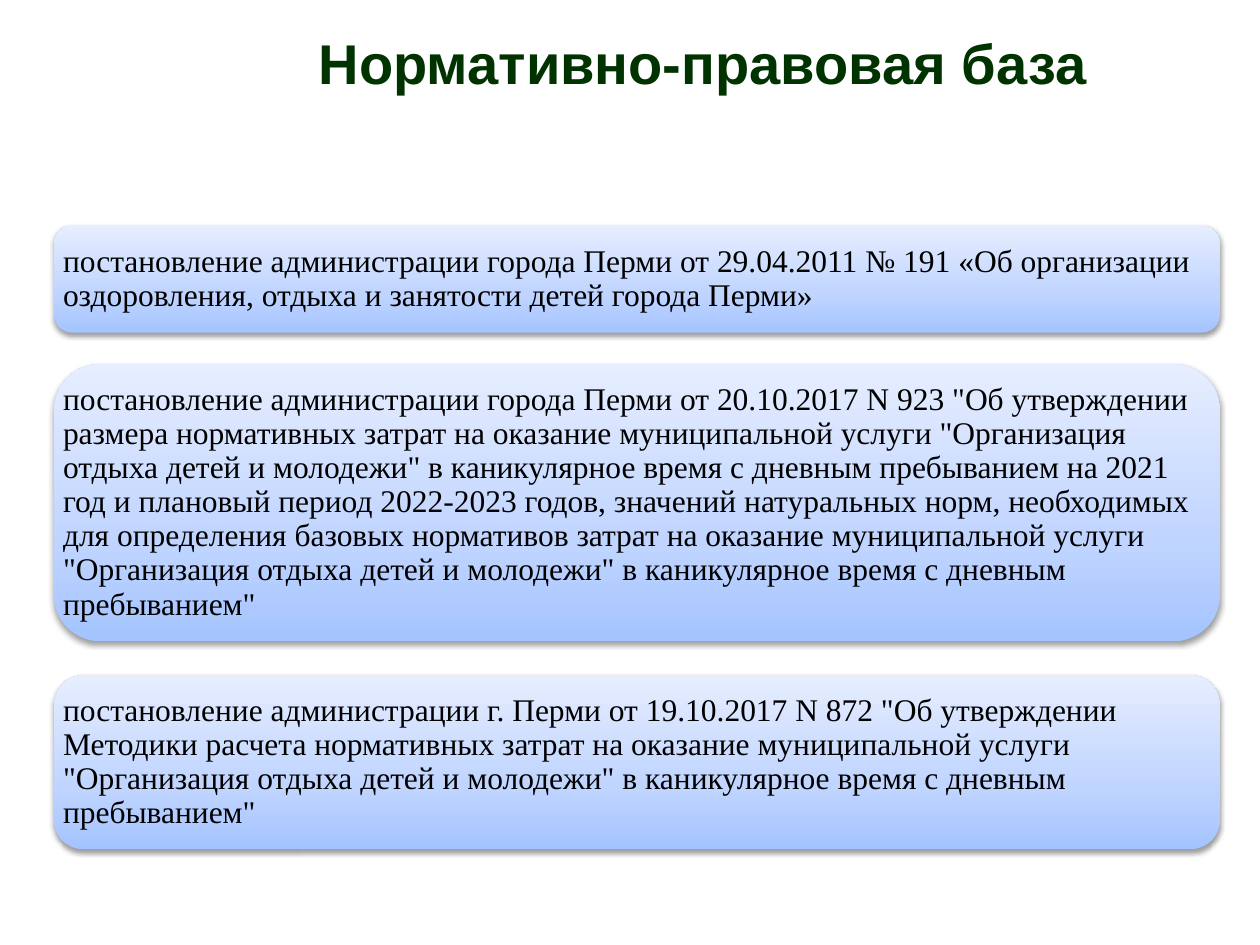
from copy import deepcopy

from lxml.etree import SubElement
from pptx import Presentation
from pptx.dml.color import RGBColor as RGB
from pptx.enum.shapes import MSO_SHAPE as SHAPE
from pptx.enum.text import MSO_ANCHOR as ANCHOR, PP_ALIGN as ALIGN
from pptx.oxml.ns import qn
from pptx.util import Inches, Pt

COLORS = {
    "title": "003300",
    "text": "000000",
    "shadow": "000000",
    "bottom": "A4C4FF",
    "middle": "BFD4FF",
    "top": "E6EEFF",
}
GRADIENT = [(0, "bottom"), (0.35, "middle"), (1, "top")]

LEFT, WIDTH = 0.43, 9.25
# Top, height and wording of each card
CARDS = [
    (1.79, 0.85, "постановление администрации города Перми от 29.04.2011 № 191 "
     "«Об организации оздоровления, отдыха и занятости детей города Перми»"),
    (2.89, 2.2, 'постановление администрации города Перми от 20.10.2017 N 923 '
     '"Об утверждении размера нормативных затрат на оказание муниципальной услуги '
     '"Организация отдыха детей и молодежи" в каникулярное время с дневным '
     'пребыванием на 2021 год и плановый период 2022-2023 годов, значений '
     'натуральных норм, необходимых для определения базовых нормативов затрат на '
     'оказание муниципальной услуги "Организация отдыха детей и молодежи" '
     'в каникулярное время с дневным пребыванием"'),
    (5.36, 1.38, 'постановление администрации г. Перми от 19.10.2017 N 872 '
     '"Об утверждении Методики расчета нормативных затрат на оказание муниципальной '
     'услуги "Организация отдыха детей и молодежи" в каникулярное время с дневным '
     'пребыванием"'),
]


def write(tf, text, *, font, size, color, bold=False, align=ALIGN.LEFT, spacing=1.0):
    tf.word_wrap = True
    tf.vertical_anchor = ANCHOR.MIDDLE
    p = tf.paragraphs[0]
    p.alignment, p.line_spacing = align, spacing
    r = p.add_run()
    r.text = text
    r.font.name, r.font.size, r.font.bold = font, Pt(size), bold
    r.font.color.rgb = RGB.from_string(COLORS[color])


def fill_gradient(sp):
    sp.fill.gradient()
    sp.fill.gradient_angle = 90
    # The default gradient has two stops; add the third
    stops = sp._element.spPr.find(".//" + qn("a:gsLst"))
    stops.append(deepcopy(stops[-1]))
    for stop, (position, color) in zip(sp.fill.gradient_stops, GRADIENT):
        stop.position = position
        stop.color.rgb = RGB.from_string(COLORS[color])


def add_shadow(sp):
    sp.shadow.inherit = False
    effects = sp._element.spPr.find(qn("a:effectLst"))
    outer = SubElement(effects, qn("a:outerShdw"), blurRad=str(Pt(3.1)),
                       dist=str(Pt(1.6)), dir="5400000", rotWithShape="0")
    color = SubElement(outer, qn("a:srgbClr"), val=COLORS["shadow"])
    SubElement(color, qn("a:alpha"), val="38000")


def add_title(s, box, text):
    title = s.shapes.title
    title.left, title.top, title.width, title.height = box
    write(title.text_frame, text, font="Arial", size=32, color="title",
          bold=True, align=ALIGN.CENTER)


def add_card(s, box, text):
    # Rounded panel
    sp = s.shapes.add_shape(SHAPE.ROUNDED_RECTANGLE, *box)
    fill_gradient(sp)
    sp.line.fill.background()
    add_shadow(sp)
    # Text across the full width, unaffected by the corner radius
    tf = s.shapes.add_textbox(*box).text_frame
    tf.margin_left = tf.margin_right = tf.margin_top = tf.margin_bottom = Inches(0.07)
    write(tf, text, font="Times New Roman", size=18, color="text", spacing=0.9)


def main():
    prs = Presentation()
    prs.slide_width, prs.slide_height = Inches(10), Inches(7.5)
    s = prs.slides.add_slide(prs.slide_layouts[5])
    add_title(s, [Inches(v) for v in (1.48, 0, 8.2, 0.99)], "Нормативно-правовая база")
    for top, height, text in CARDS:
        add_card(s, [Inches(v) for v in (LEFT, top, WIDTH, height)], text)
    prs.save("out.pptx")


if __name__ == "__main__":
    main()
